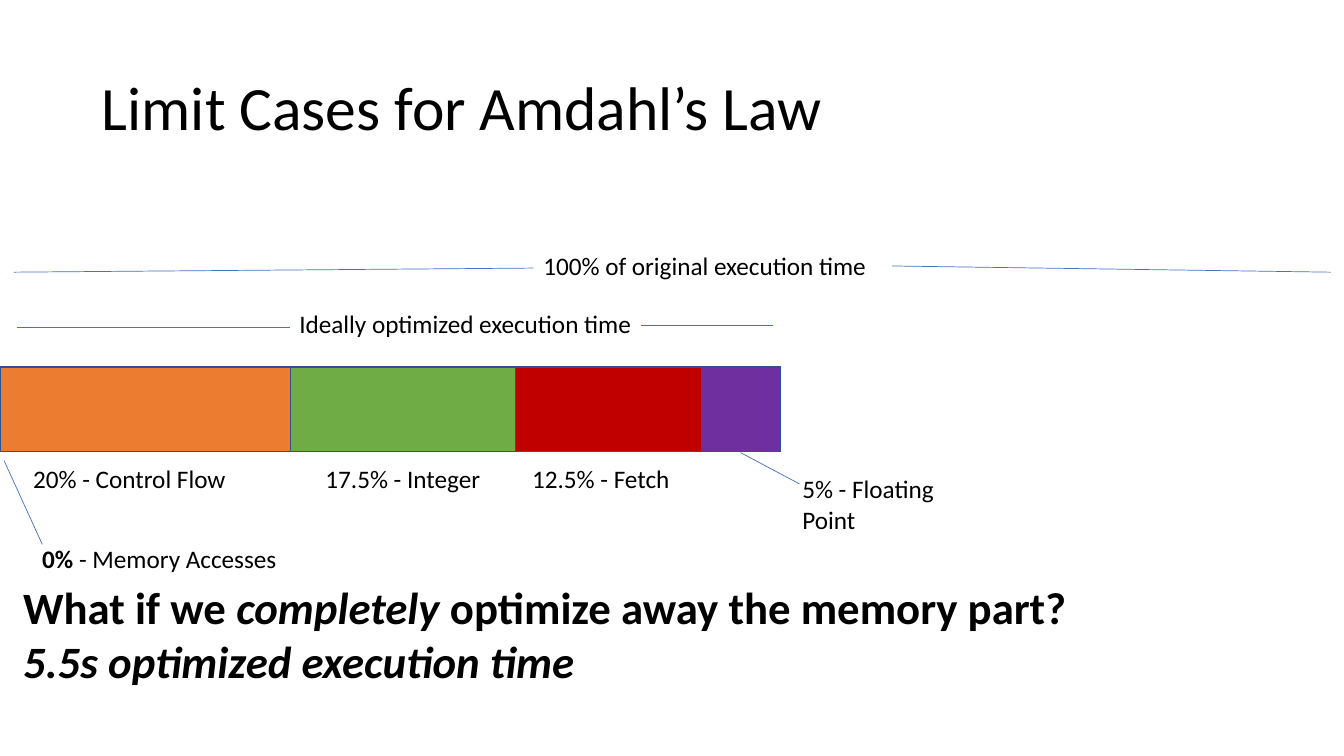
from lxml.etree import SubElement
from pptx import Presentation
from pptx.dml.color import RGBColor
from pptx.enum.shapes import MSO_CONNECTOR
from pptx.oxml.ns import qn
from pptx.util import Pt

BLACK = RGBColor(0x00, 0x00, 0x00)
LINE_BLUE = RGBColor(0x44, 0x71, 0xC4)
BORDER_BLUE = RGBColor(0x2E, 0x52, 0x8F)
ORANGE = RGBColor(0xEC, 0x7C, 0x30)
GREEN = RGBColor(0x6F, 0xAC, 0x46)
RED = RGBColor(0xC0, 0x00, 0x00)
PURPLE = RGBColor(0x6F, 0x2F, 0x9F)

SEGMENTS = [(207.5, ORANGE), (160.5, GREEN), (133.2, RED), (56, PURPLE)]
GUIDES = [
    (637.2, 190, 950.4, 194.4),
    (10, 194.4, 381, 191.5),
    (529, 323.3, 571, 345.6),
    (12.2, 234, 207.4, 234),
    (458, 232.6, 552.2, 232.6),
    (2.9, 329, 30.2, 388.8),
]


def add_text_box(slide, left, top, width, height, inset=0.72):
    box = slide.shapes.add_textbox(Pt(left), Pt(top), Pt(width), Pt(height))
    frame = box.text_frame
    frame.word_wrap = True
    frame.margin_left = frame.margin_right = frame.margin_bottom = 0
    frame.margin_top = Pt(inset)
    return frame


def style_paragraph(para, spans, size=18, indent=0.72, before=1.0):
    para.space_before = Pt(before)
    para._p.get_or_add_pPr().set("marL", str(Pt(indent)))
    for text, bold, italic in spans:
        span = para.add_run()
        span.text = text
        span.font.name = "Calibri"
        span.font.size = Pt(size)
        span.font.bold = bold
        span.font.italic = italic
        span.font.color.rgb = BLACK


def add_tab_stops(para, positions):
    stops = SubElement(para._p.get_or_add_pPr(), qn("a:tabLst"))
    for position in positions:
        SubElement(stops, qn("a:tab"), pos=str(Pt(position)), algn="l")


def add_guide(slide, start_x, start_y, end_x, end_y):
    guide = slide.shapes.add_connector(
        MSO_CONNECTOR.STRAIGHT, Pt(start_x), Pt(start_y), Pt(end_x), Pt(end_y))
    guide.line.color.rgb = LINE_BLUE
    guide.line.width = Pt(0.5)
    SubElement(guide._element.spPr, qn("a:effectLst"))


def add_borders(cell):
    properties = cell._tc.get_or_add_tcPr()
    for side in ("lnL", "lnR", "lnT", "lnB"):
        border = SubElement(properties, qn(f"a:{side}"), w=str(Pt(1)))
        fill = SubElement(border, qn("a:solidFill"))
        SubElement(fill, qn("a:srgbClr"), val=str(BORDER_BLUE))


def add_time_bar(slide, left, top, height):
    width = sum(segment_width for segment_width, _ in SEGMENTS)
    table = slide.shapes.add_table(
        1, len(SEGMENTS), Pt(left), Pt(top), Pt(width), Pt(height)).table
    table.first_row = False
    table.horz_banding = False
    for index, (segment_width, color) in enumerate(SEGMENTS):
        table.columns[index].width = Pt(segment_width)
        cell = table.cell(0, index)
        add_borders(cell)
        cell.fill.solid()
        cell.fill.fore_color.rgb = color


def main():
    deck = Presentation()
    deck.slide_width = Pt(960)
    deck.slide_height = Pt(540)
    slide = deck.slides.add_slide(deck.slide_layouts[6])

    title = add_text_box(slide, 14.4, 19.4, 903.6, 109.4, 29.5)
    style_paragraph(title.paragraphs[0], [("Limit Cases for Amdahl’s Law", False, False)],
                    size=44, indent=58.3, before=1.1)

    add_time_bar(slide, 0, 262.1, 60.5)
    for guide in GUIDES:
        add_guide(slide, *guide)

    spans = add_text_box(slide, 213.1, 177.8, 407.5, 65.5)
    style_paragraph(spans.paragraphs[0],
                    [("100% of original execution time", False, False)], indent=175)
    style_paragraph(spans.add_paragraph(),
                    [("Ideally optimized execution time", False, False)], before=20)

    shares = add_text_box(slide, 23, 330.5, 455.8, 23.8).paragraphs[0]
    style_paragraph(shares, [
        ("20% - Control Flow\t17.5% - Integer\t12.5% - Fetch", False, False)])
    add_tab_stops(shares, [208.8, 356.4])

    floating = add_text_box(slide, 572.4, 337.7, 96.5, 45.4)
    style_paragraph(floating.paragraphs[0], [("5% - Floating Point", False, False)])

    question = add_text_box(slide, 15.8, 384.5, 746.6, 107.3, 3.6)
    style_paragraph(question.paragraphs[0],
                    [("0% ", True, False), ("- Memory Accesses", False, False)],
                    indent=14.4, before=3.4)
    style_paragraph(question.add_paragraph(), [
        ("What if we ", True, False),
        ("completely ", True, True),
        ("optimize away the memory part?", True, False),
    ], size=32, before=4.3)
    style_paragraph(question.add_paragraph(),
                    [("5.5s optimized execution time", True, True)], size=32, before=0)

    deck.save("out.pptx")


if __name__ == "__main__":
    main()
